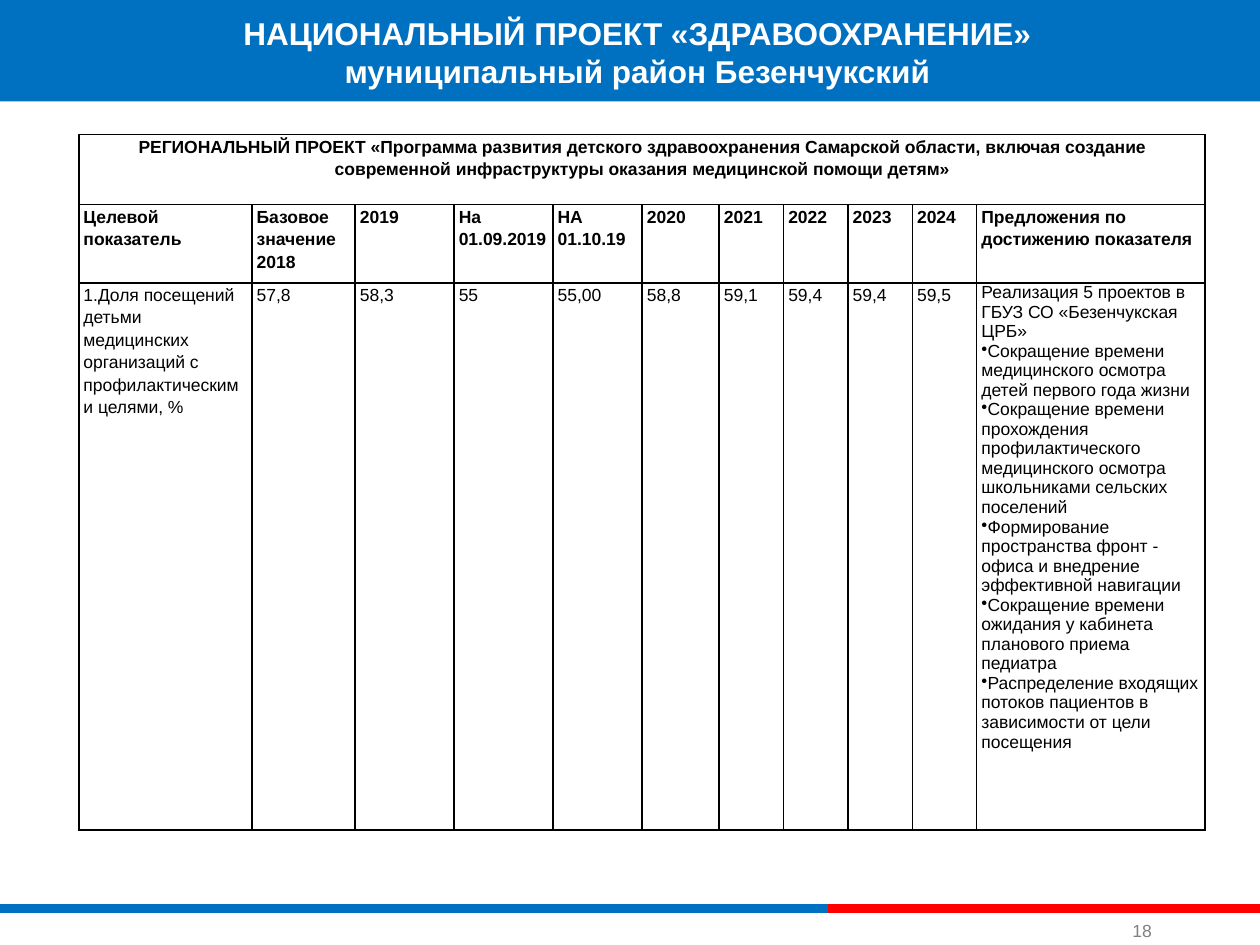
from lxml.etree import SubElement
from pptx import Presentation
from pptx.dml.color import RGBColor
from pptx.enum.shapes import MSO_CONNECTOR, MSO_SHAPE
from pptx.enum.text import MSO_ANCHOR, MSO_AUTO_SIZE, PP_ALIGN
from pptx.oxml import parse_xml
from pptx.oxml.ns import nsdecls, qn
from pptx.util import Pt

COLORS = {"blue": "0070C1", "red": "FF0000", "white": "FFFFFF",
          "black": "000000", "gray": "808080"}
BULLET = "•"

HEADING = ["НАЦИОНАЛЬНЫЙ ПРОЕКТ «ЗДРАВООХРАНЕНИЕ»", "муниципальный район Безенчукский"]
PAGE_NUMBER = "18"
PROJECT = ["РЕГИОНАЛЬНЫЙ ПРОЕКТ «Программа развития детского здравоохранения Самарской "
           "области, включая создание современной инфраструктуры оказания медицинской "
           "помощи детям»"]
COLUMNS = [
    (["Целевой показатель"], 99),
    (["Базовое значение", "2018"], 59),
    (["2019"], 56.5),
    (["На", "01.09.2019"], 56.5),
    (["НА 01.10.19"], 51),
    (["2020"], 44),
    (["2021"], 36.8),
    (["2022"], 36.8),
    (["2023"], 36.8),
    (["2024"], 36.8),
    (["Предложения по достижению показателя"], 130.5),
]
INDICATOR = "1.Доля посещений детьми медицинских организаций с профилактическими целями, %"
VALUES = ["57,8", "58,3", "55", "55,00", "58,8", "59,1", "59,4", "59,4", "59,5"]
PROPOSALS = [
    "Реализация 5 проектов в ГБУЗ СО «Безенчукская ЦРБ»",
    "•Сокращение времени медицинского осмотра детей первого года жизни",
    "•Сокращение времени прохождения профилактического медицинского осмотра "
    "школьниками сельских поселений",
    "•Формирование пространства фронт - офиса и внедрение эффективной навигации",
    "•Сокращение времени ожидания у кабинета планового приема педиатра",
    "•Распределение входящих потоков пациентов в зависимости от цели посещения",
]
ROW_HEIGHTS = [40, 44.6, 312.6]
TABLE_LEFT, TABLE_TOP = 45, 77
FOOTER_LINES = [(0, 473, "blue"), (473, 720, "red")]
FOOTER_Y = 519.3


def rgb(name):
    return RGBColor.from_string(COLORS[name])


def write(frame, lines, size=10, color="black", bold=False, align=PP_ALIGN.LEFT,
          spacing=None, anchor=MSO_ANCHOR.TOP):
    frame.vertical_anchor = anchor
    for index, line in enumerate(lines):
        paragraph = frame.paragraphs[0] if index == 0 else frame.add_paragraph()
        paragraph.alignment = align
        if spacing:
            paragraph.line_spacing = spacing
        if line.startswith(BULLET):
            properties = paragraph._p.get_or_add_pPr()
            properties.set("marL", "0")
            properties.set("indent", "0")
            SubElement(properties, qn("a:buChar")).set("char", BULLET)
        run = paragraph.add_run()
        run.text = line.removeprefix(BULLET)
        run.font.name = "Arial"
        run.font.size = Pt(size)
        run.font.bold = bold
        run.font.color.rgb = rgb(color)


def set_margins(frame, side, vertical):
    frame.margin_left = frame.margin_right = Pt(side)
    frame.margin_top = frame.margin_bottom = Pt(vertical)


def style_cell(cell):
    set_margins(cell, 2.7, 0)
    cell.fill.background()
    properties = cell._tc.get_or_add_tcPr()
    for position, edge in enumerate(("lnL", "lnR", "lnT", "lnB")):
        properties.insert(position, parse_xml(
            f'<a:{edge} {nsdecls("a")} w="{Pt(1)}"><a:solidFill>'
            f'<a:srgbClr val="{COLORS["black"]}"/></a:solidFill></a:{edge}>'))


def add_heading(slide):
    band = slide.shapes.add_shape(MSO_SHAPE.RECTANGLE, 0, Pt(-2), Pt(720), Pt(60))
    band.shadow.inherit = False
    band.fill.solid()
    band.fill.fore_color.rgb = rgb("blue")
    band.line.fill.background()

    heading = slide.shapes.title
    heading._element.addprevious(band._element)
    heading.left, heading.top, heading.width, heading.height = map(Pt, (131, 4.5, 466.5, 72.5))
    frame = heading.text_frame
    frame.auto_size = MSO_AUTO_SIZE.NONE
    frame.word_wrap = False
    set_margins(frame, 3.6, 3.6)
    write(frame, HEADING, size=18, color="white", bold=True, align=PP_ALIGN.CENTER)


def add_indicators(slide):
    widths = [width for _, width in COLUMNS]
    table = slide.shapes.add_table(
        len(ROW_HEIGHTS), len(COLUMNS), Pt(TABLE_LEFT), Pt(TABLE_TOP),
        Pt(sum(widths)), Pt(sum(ROW_HEIGHTS))).table
    table.first_row = table.horz_banding = False
    for column, width in zip(table.columns, widths):
        column.width = Pt(width)
    for row, height in zip(table.rows, ROW_HEIGHTS):
        row.height = Pt(height)
    for cell in table.iter_cells():
        style_cell(cell)

    project = table.cell(0, 0)
    project.merge(table.cell(0, len(COLUMNS) - 1))
    write_cell(project, PROJECT, bold=True, align=PP_ALIGN.CENTER, spacing=1.15)
    for index, (label, _) in enumerate(COLUMNS):
        write_cell(table.cell(1, index), label, bold=True, spacing=1.15)
    for index, value in enumerate([INDICATOR, *VALUES]):
        write_cell(table.cell(2, index), [value], spacing=1.15)
    write_cell(table.cell(2, len(COLUMNS) - 1), PROPOSALS)


def write_cell(cell, lines, **formatting):
    write(cell.text_frame, lines, **formatting)
    cell.vertical_anchor = MSO_ANCHOR.TOP


def add_footer(slide):
    for start, end, color in FOOTER_LINES:
        line = slide.shapes.add_connector(
            MSO_CONNECTOR.STRAIGHT, Pt(start), Pt(FOOTER_Y), Pt(end), Pt(FOOTER_Y))
        line.line.color.rgb = rgb(color)
        line.line.width = Pt(5)
        SubElement(line._element.spPr, qn("a:effectLst"))
    number = slide.shapes.add_textbox(Pt(643.5), Pt(523.5), Pt(24), Pt(18)).text_frame
    number.word_wrap = True
    set_margins(number, 3.6, 3.6)
    write(number, [PAGE_NUMBER], color="gray", anchor=MSO_ANCHOR.BOTTOM)


def main():
    presentation = Presentation()
    presentation.slide_width, presentation.slide_height = Pt(720), Pt(540)
    slide = presentation.slides.add_slide(presentation.slide_layouts[5])
    add_heading(slide)
    add_indicators(slide)
    add_footer(slide)
    presentation.save("out.pptx")


if __name__ == "__main__":
    main()
